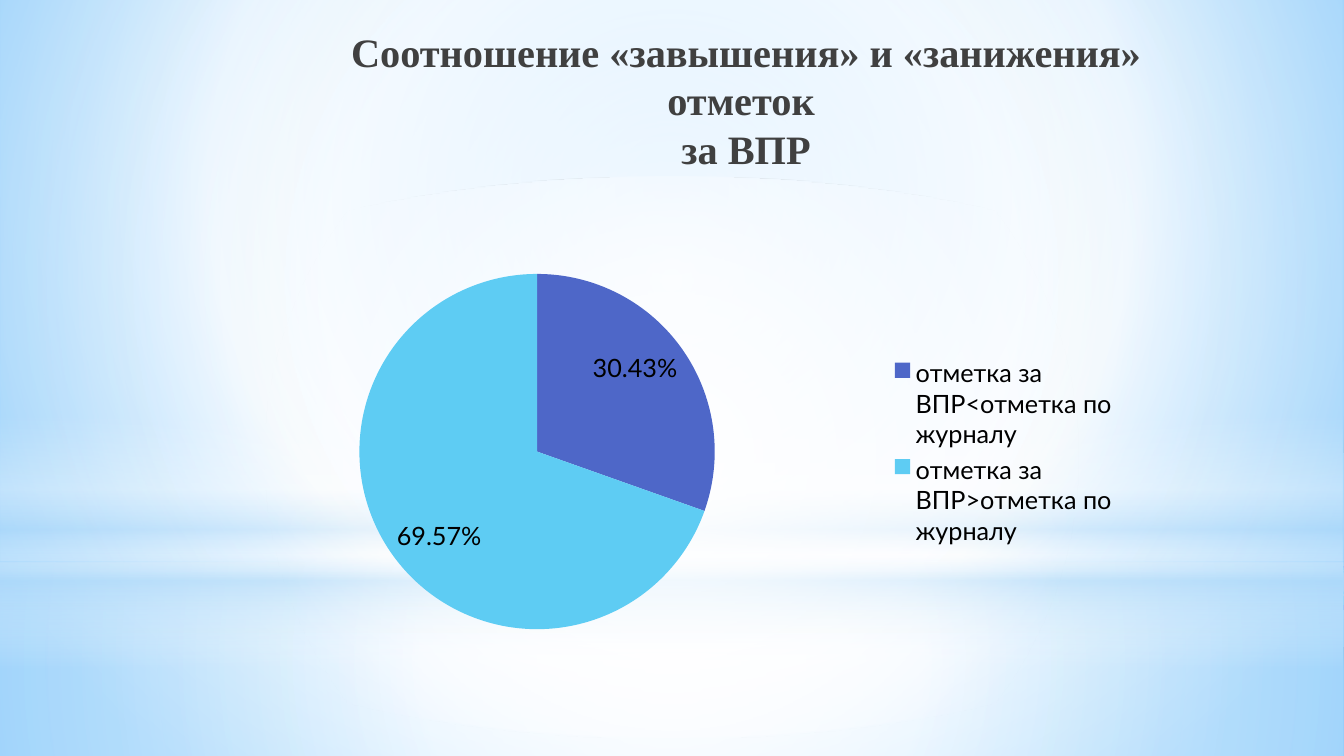
from dataclasses import dataclass

from lxml import etree
from pptx import Presentation
from pptx.chart.data import CategoryChartData
from pptx.dml.color import RGBColor
from pptx.enum.chart import XL_CHART_TYPE, XL_LABEL_POSITION, XL_LEGEND_POSITION
from pptx.enum.shapes import MSO_SHAPE
from pptx.enum.text import MSO_ANCHOR, PP_ALIGN
from pptx.oxml.ns import qn
from pptx.util import Inches, Pt

SLIDE_W, SLIDE_H = Inches(13.33), Inches(7.5)
RECT, ELLIPSE = MSO_SHAPE.RECTANGLE, MSO_SHAPE.OVAL
PIE = XL_CHART_TYPE.PIE
INSIDE_END = XL_LABEL_POSITION.INSIDE_END
LEGEND_RIGHT = XL_LEGEND_POSITION.RIGHT
TOP, CENTER = MSO_ANCHOR.TOP, PP_ALIGN.CENTER

WHITE, PALE_BLUE = "FFFFFF", "B4DCFA"
MIDDLE = (50, 50, 50, 50)


@dataclass
class Box:
    """A frame in percent of the slide's width and height."""
    left: float
    top: float
    width: float
    height: float

    def emu(self) -> tuple[int, int, int, int]:
        return (int(SLIDE_W * self.left / 100), int(SLIDE_H * self.top / 100),
                int(SLIDE_W * self.width / 100), int(SLIDE_H * self.height / 100))


@dataclass
class Stop:
    """A gradient stop; position and opacity are percentages."""
    position: int
    color: str
    opacity: int = 100


@dataclass
class Glow:
    """A background layer; it is circular when focus is set, else vertical."""
    preset: MSO_SHAPE
    box: Box
    stops: list[Stop]
    focus: tuple[int, int, int, int] | None = MIDDLE


@dataclass
class Slice:
    category: str
    share: float
    color: str


BACKDROP = [Stop(0, "9ED5FF"), Stop(60, WHITE), Stop(100, "5BB9FF")]
BACKDROP_FOCUS = (20, 10, 20, 60)
GLOWS = [
    Glow(RECT, Box(0, 74.4, 100, 25.6),
         [Stop(0, WHITE, 91), Stop(37, WHITE, 76), Stop(100, PALE_BLUE, 79)]),
    Glow(RECT, Box(0, 0, 100, 74.4),
         [Stop(0, WHITE, 89), Stop(48, WHITE, 62), Stop(100, PALE_BLUE, 79)]),
    Glow(RECT, Box(0, 54.93, 100, 33.33),
         [Stop(0, WHITE, 0), Stop(29, WHITE, 30), Stop(45, PALE_BLUE, 40),
          Stop(55, WHITE, 26), Stop(65, PALE_BLUE, 60), Stop(100, WHITE, 0)], None),
    Glow(ELLIPSE, Box(0, 23.33, 100, 74.4), [Stop(0, WHITE), Stop(56, WHITE, 0)]),
]
TITLE = "Соотношение «завышения» и «занижения» отметок \vза ВПР"
TITLE_BOX = Box(19.88, 2.93, 71.27, 16.67)
CHART_BOX = Box(13.95, 34.4, 70, 50.67)
SLICES = [
    Slice("отметка за ВПР<отметка по журналу", 0.3043, "4E67C8"),
    Slice("отметка за ВПР>отметка по журналу", 0.6957, "5ECCF3"),
]


def rgb(color: str) -> RGBColor:
    return RGBColor.from_string(color)


def set_gradient(fill, parent, stops: list[Stop], focus) -> None:
    """Give fill, which lives in the parent element, a gradient with these stops."""
    fill.gradient()
    grad = next(parent.iter(qn("a:gradFill")))
    for child in list(grad):
        grad.remove(child)
    stop_list = etree.SubElement(grad, qn("a:gsLst"))
    for stop in stops:
        gs = etree.SubElement(stop_list, qn("a:gs"), pos=str(stop.position * 1000))
        color = etree.SubElement(gs, qn("a:srgbClr"), val=stop.color)
        if stop.opacity < 100:
            etree.SubElement(color, qn("a:alpha"), val=str(stop.opacity * 1000))
    if focus is None:
        etree.SubElement(grad, qn("a:lin"), ang=str(90 * 60000), scaled="0")
    else:
        circle = etree.SubElement(grad, qn("a:path"), path="circle")
        sides = {side: str(share * 1000) for side, share in zip("ltrb", focus)}
        etree.SubElement(circle, qn("a:fillToRect"), **sides)


def add_glow(slide, glow: Glow) -> None:
    sp = slide.shapes.add_shape(glow.preset, *glow.box.emu())
    sp.shadow.inherit = False
    sp.line.fill.background()
    set_gradient(sp.fill, sp.element.spPr, glow.stops, glow.focus)


def add_title(slide) -> None:
    tf = slide.shapes.add_textbox(*TITLE_BOX.emu()).text_frame
    tf.word_wrap = True
    tf.vertical_anchor = TOP
    p = tf.paragraphs[0]
    p.text = TITLE
    p.alignment = CENTER
    p.font.name = "Times New Roman"
    p.font.size = Pt(28.8)
    p.font.bold = True
    p.font.color.rgb = rgb("404040")


def add_pie(slide) -> None:
    data = CategoryChartData(number_format="0.00%")
    data.categories = [s.category for s in SLICES]
    data.add_series("Series 1", [s.share for s in SLICES])
    chart = slide.shapes.add_chart(PIE, *CHART_BOX.emu(), data).chart
    chart.has_title = False
    chart.font.name = "Lato"
    chart.font.size = Pt(18)
    chart.font.color.rgb = rgb("000000")
    chart.has_legend = True
    chart.legend.position = LEGEND_RIGHT
    chart.legend.include_in_layout = False

    plot = chart.plots[0]
    plot.vary_by_categories = True
    plot.has_data_labels = True
    labels = plot.data_labels
    labels.show_value = True
    labels.show_percentage = False
    labels.number_format = "0.00%"
    labels.number_format_is_linked = False
    labels.position = INSIDE_END
    for i, piece in enumerate(SLICES):
        fill = plot.series[0].points[i].format.fill
        fill.solid()
        fill.fore_color.rgb = rgb(piece.color)


def main() -> None:
    prs = Presentation()
    prs.slide_width, prs.slide_height = SLIDE_W, SLIDE_H
    slide = prs.slides.add_slide(prs.slide_layouts[6])
    set_gradient(slide.background.fill, slide.element, BACKDROP, BACKDROP_FOCUS)
    for glow in GLOWS:
        add_glow(slide, glow)
    add_title(slide)
    add_pie(slide)
    prs.save("out.pptx")


if __name__ == "__main__":
    main()
